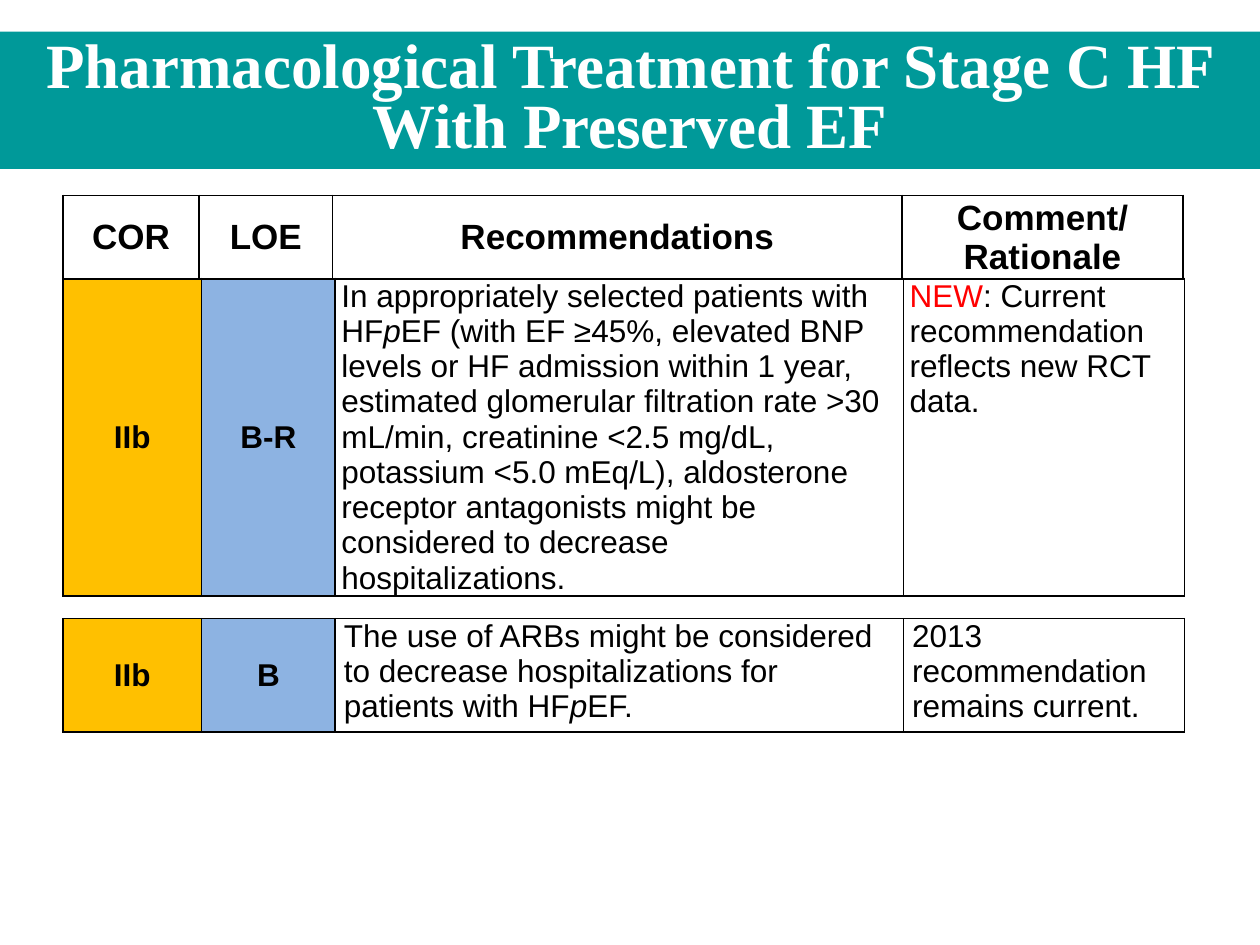
import pptx
import pptx.dml.color
import pptx.enum.shapes
import pptx.enum.text
import pptx.oxml
import pptx.oxml.ns
import pptx.util

Inches, Pt = pptx.util.Inches, pptx.util.Pt
ALIGN = pptx.enum.text.PP_ALIGN
ANCHOR = pptx.enum.text.MSO_ANCHOR

COLORS = {
    "teal": "009999",
    "amber": "FFC000",
    "blue": "8DB3E2",
    "red": "FF0000",
    "black": "000000",
    "white": "FFFFFF",
}


def rgb(name):
    return pptx.dml.color.RGBColor.from_string(COLORS[name])


def add_run(paragraph, text, size, font="Arial", color="black", bold=False, italic=False):
    run = paragraph.add_run()
    run.text = text
    run.font.name = font
    run.font.size = Pt(size)
    run.font.bold = bold
    run.font.italic = italic
    run.font.color.rgb = rgb(color)


def add_borders(cell):
    properties = cell._tc.get_or_add_tcPr()
    for side in ("lnL", "lnR", "lnT", "lnB"):
        properties.append(pptx.oxml.parse_xml(
            f'<a:{side} {pptx.oxml.ns.nsdecls("a")} w="{Pt(1)}"><a:solidFill>'
            f'<a:srgbClr val="{COLORS["black"]}"/></a:solidFill></a:{side}>'))


def add_title_band(slide, left, top, width, height, text):
    band = slide.shapes.add_shape(
        pptx.enum.shapes.MSO_SHAPE.RECTANGLE,
        Inches(left), Inches(top), Inches(width), Inches(height))
    band.shadow.inherit = False
    band.fill.solid()
    band.fill.fore_color.rgb = rgb("teal")
    band.line.fill.background()
    frame = band.text_frame
    frame.word_wrap = True
    frame.vertical_anchor = ANCHOR.MIDDLE
    paragraph = frame.paragraphs[0]
    paragraph.alignment = ALIGN.CENTER
    paragraph.line_spacing = 0.8
    add_run(paragraph, text, 36, "Times New Roman", "white", bold=True)


def add_row_table(slide, left, top, height, widths, cells, margin, size):
    """One-row table; a cell is (paragraphs of runs, fill, is_label)."""
    table = slide.shapes.add_table(
        1, len(cells), Inches(left), Inches(top), Inches(sum(widths)), Inches(height)).table
    table.first_row = False
    table.horz_banding = False
    for index, (paragraphs, fill, is_label) in enumerate(cells):
        table.columns[index].width = Inches(widths[index])
        cell = table.cell(0, index)
        cell.margin_left = cell.margin_right = Inches(margin)
        cell.margin_top = cell.margin_bottom = 0
        cell.vertical_anchor = ANCHOR.MIDDLE if is_label else ANCHOR.TOP
        add_borders(cell)
        if fill:
            cell.fill.solid()
            cell.fill.fore_color.rgb = rgb(fill)
        else:
            cell.fill.background()
        for number, runs in enumerate(paragraphs):
            frame = cell.text_frame
            paragraph = frame.add_paragraph() if number else frame.paragraphs[0]
            paragraph.alignment = ALIGN.CENTER if is_label else ALIGN.LEFT
            for text, style in runs:
                add_run(paragraph, text, size, bold=is_label, **style)


def label(*lines, fill=None):
    return [[(line, {})] for line in lines], fill, True


def body(*runs):
    return [runs], None, False


def main():
    presentation = pptx.Presentation()
    presentation.slide_width, presentation.slide_height = Inches(10), Inches(7.5)
    slide = presentation.slides.add_slide(presentation.slide_layouts[6])
    left = 0.5
    header_widths = (1.08, 1.06, 4.52, 2.23)
    body_widths = (1.1, 1.06, 4.51, 2.23)
    italic = {"italic": True}

    # New recommendation
    add_row_table(slide, left, 2.21, 2.52, body_widths, [
        label("IIb", fill="amber"),
        label("B-R", fill="blue"),
        body(("In appropriately selected patients with HF", {}), ("p", italic),
             ("EF (with EF ≥45%, elevated BNP levels or HF admission within 1 year, "
              "estimated glomerular filtration rate >30 mL/min, creatinine <2.5 mg/dL, "
              "potassium <5.0 mEq/L), aldosterone receptor antagonists might be "
              "considered to decrease hospitalizations.", {})),
        body(("NEW", {"color": "red"}),
             (": Current recommendation reflects new RCT data.", {})),
    ], margin=0.05, size=18)

    # Title
    add_title_band(slide, 0, 0.25, 10, 1.09,
                   "Pharmacological Treatment for Stage C HF With Preserved EF")

    # Column headings
    add_row_table(slide, left, 1.55, 0.67, header_widths, [
        label("COR"), label("LOE"), label("Recommendations"), label("Comment/", "Rationale"),
    ], margin=0.07, size=20)

    # Earlier recommendation
    add_row_table(slide, left, 4.91, 0.9, body_widths, [
        label("IIb", fill="amber"),
        label("B", fill="blue"),
        body(("The use of ARBs might be considered to decrease hospitalizations "
              "for patients with HF", {}), ("p", italic), ("EF.", {})),
        body(("2013 recommendation remains current.", {})),
    ], margin=0.07, size=18)

    presentation.save("out.pptx")


if __name__ == "__main__":
    main()
